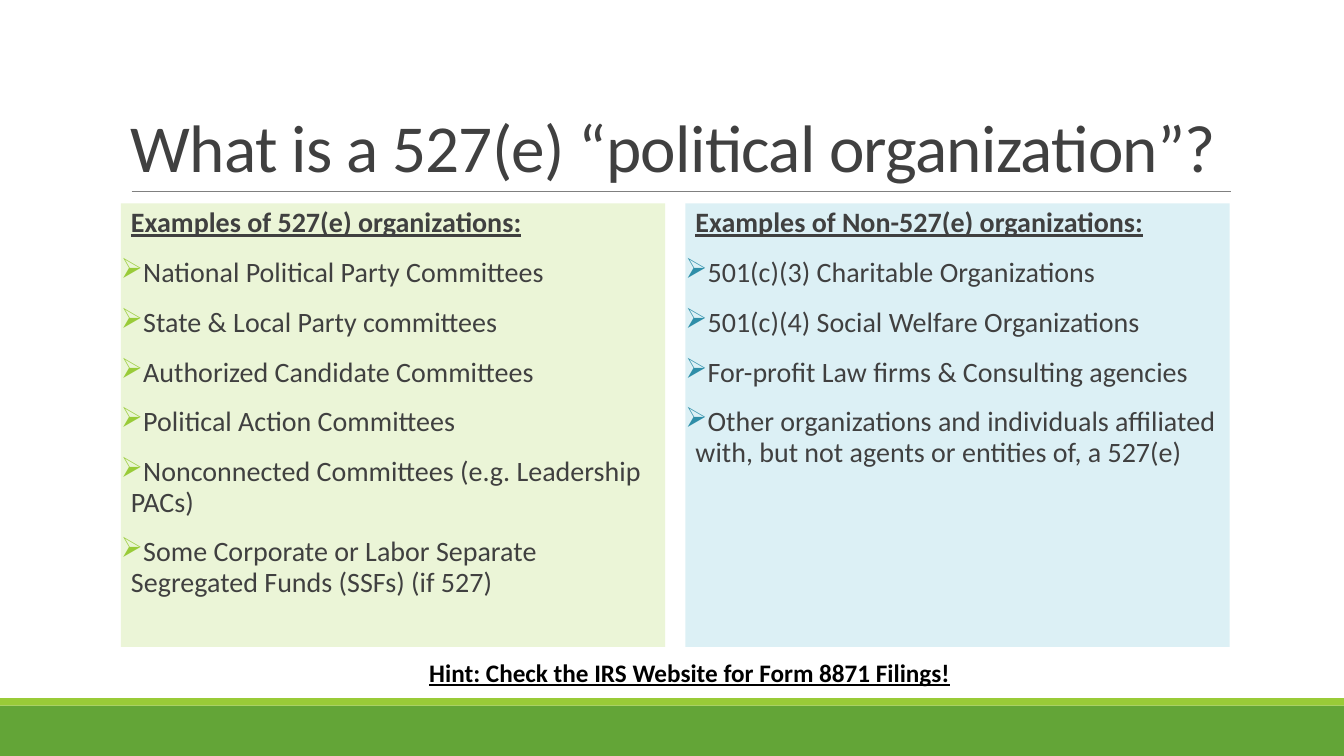
from lxml.etree import SubElement
from pptx import Presentation
from pptx.dml.color import RGBColor
from pptx.enum.shapes import MSO_CONNECTOR as Connector, MSO_SHAPE as Shape
from pptx.enum.text import MSO_ANCHOR as Anchor
from pptx.oxml.ns import qn
from pptx.util import Pt

TITLE = "What is a 527(e) “political organization”?"
COLUMNS = [
    {
        "heading": "Examples of 527(e) organizations:",
        "examples": [
            "National Political Party Committees",
            "State & Local Party committees",
            "Authorized Candidate Committees",
            "Political Action Committees",
            "Nonconnected Committees (e.g. Leadership PACs)",
            "Some Corporate or Labor Separate Segregated Funds (SSFs) (if 527)",
        ],
        "panel": "EBF5D7",
        "bullet": "99CB38",
    },
    {
        "heading": "Examples of Non-527(e) organizations:",
        "examples": [
            "501(c)(3) Charitable Organizations",
            "501(c)(4) Social Welfare Organizations",
            "For-profit Law firms & Consulting agencies",
            "Other organizations and individuals affiliated with, but not agents or entities of, a 527(e)",
        ],
        "panel": "DCF0F5",
        "bullet": "2E8EA8",
    },
]
HINT = "Hint: Check the IRS Website for Form 8871 Filings!"

THEME = {
    "font": "Calibri",
    "text": "404040", "hint": "000000", "rule": "808080",
    "band": "63A537", "stripe": "99CB38",
    "title_size": 48, "body_size": 20, "hint_size": 18,
}
WIDTH, HEIGHT = 960, 540
BAND_TOP, STRIPE_HEIGHT = 504, 5.4
LEFT, PANEL_TOP, PANEL_WIDTH, PANEL_HEIGHT, GAP = 86.4, 145.3, 388.8, 316.8, 14.4
INDENT = 7.2


def apply(target, values):
    for name, value in values.items():
        setattr(target, name, value)


def add_block(slide, left, top, width, height, colour):
    block = slide.shapes.add_shape(Shape.RECTANGLE, Pt(left), Pt(top), Pt(width), Pt(height))
    block.shadow.inherit = False
    block.fill.solid()
    block.fill.fore_color.rgb = RGBColor.from_string(colour)
    block.line.fill.background()
    return block


def add_words(paragraph, words, size, colour, strong=False):
    run = paragraph.add_run()
    run.text = words
    apply(run.font, {"name": THEME["font"], "size": Pt(size), "bold": strong, "underline": strong})
    run.font.color.rgb = RGBColor.from_string(colour)
    return run


def add_bullet(paragraph, colour):
    properties = paragraph._p.get_or_add_pPr()
    properties.set("indent", str(-Pt(INDENT)))
    SubElement(SubElement(properties, qn("a:buClr")), qn("a:srgbClr"), val=colour)
    SubElement(properties, qn("a:buChar"), char="➢")


def add_column(slide, left, column):
    panel = add_block(slide, left, PANEL_TOP, PANEL_WIDTH, PANEL_HEIGHT, column["panel"])
    frame = panel.text_frame
    apply(frame, {"word_wrap": True, "vertical_anchor": Anchor.TOP, "margin_left": 0,
                  "margin_right": 0, "margin_top": Pt(3.6), "margin_bottom": Pt(3.6)})
    for row, words in enumerate([column["heading"], *column["examples"]]):
        paragraph = frame.add_paragraph() if row else frame.paragraphs[0]
        apply(paragraph, {"line_spacing": 0.9, "space_before": Pt(12), "space_after": Pt(2)})
        properties = paragraph._p.get_or_add_pPr()
        properties.set("marL", str(Pt(INDENT)))
        properties.set("algn", "l")
        if row:
            add_bullet(paragraph, column["bullet"])
        add_words(paragraph, words, THEME["body_size"], THEME["text"], strong=row == 0)


def add_title(slide):
    frame = slide.shapes.add_textbox(Pt(LEFT), Pt(22.6), Pt(792), Pt(114.2)).text_frame
    apply(frame, {"word_wrap": True, "vertical_anchor": Anchor.BOTTOM})
    frame.paragraphs[0].line_spacing = 0.85
    run = add_words(frame.paragraphs[0], TITLE, THEME["title_size"], THEME["text"])
    run.font._element.set("spc", "-50")


def add_rule(slide):
    rule = slide.shapes.add_connector(Connector.STRAIGHT, Pt(94.1), Pt(136.8), Pt(879.1), Pt(136.8))
    rule.line.color.rgb = RGBColor.from_string(THEME["rule"])
    rule.line.width = Pt(0.5)
    SubElement(rule._element.spPr, qn("a:effectLst"))


def add_hint(slide):
    frame = slide.shapes.add_textbox(Pt(299.5), Pt(465.8), Pt(390.2), Pt(29.1)).text_frame
    frame.word_wrap = False
    add_words(frame.paragraphs[0], HINT, THEME["hint_size"], THEME["hint"], strong=True)


def main():
    deck = Presentation()
    apply(deck, {"slide_width": Pt(WIDTH), "slide_height": Pt(HEIGHT)})
    slide = deck.slides.add_slide(deck.slide_layouts[6])
    add_block(slide, 0, BAND_TOP, WIDTH, HEIGHT - BAND_TOP, THEME["band"])
    add_block(slide, 0, BAND_TOP - STRIPE_HEIGHT, WIDTH, STRIPE_HEIGHT, THEME["stripe"])
    add_rule(slide)
    add_title(slide)
    for place, column in enumerate(COLUMNS):
        add_column(slide, LEFT + place * (PANEL_WIDTH + GAP), column)
    add_hint(slide)
    deck.save("out.pptx")


if __name__ == "__main__":
    main()
